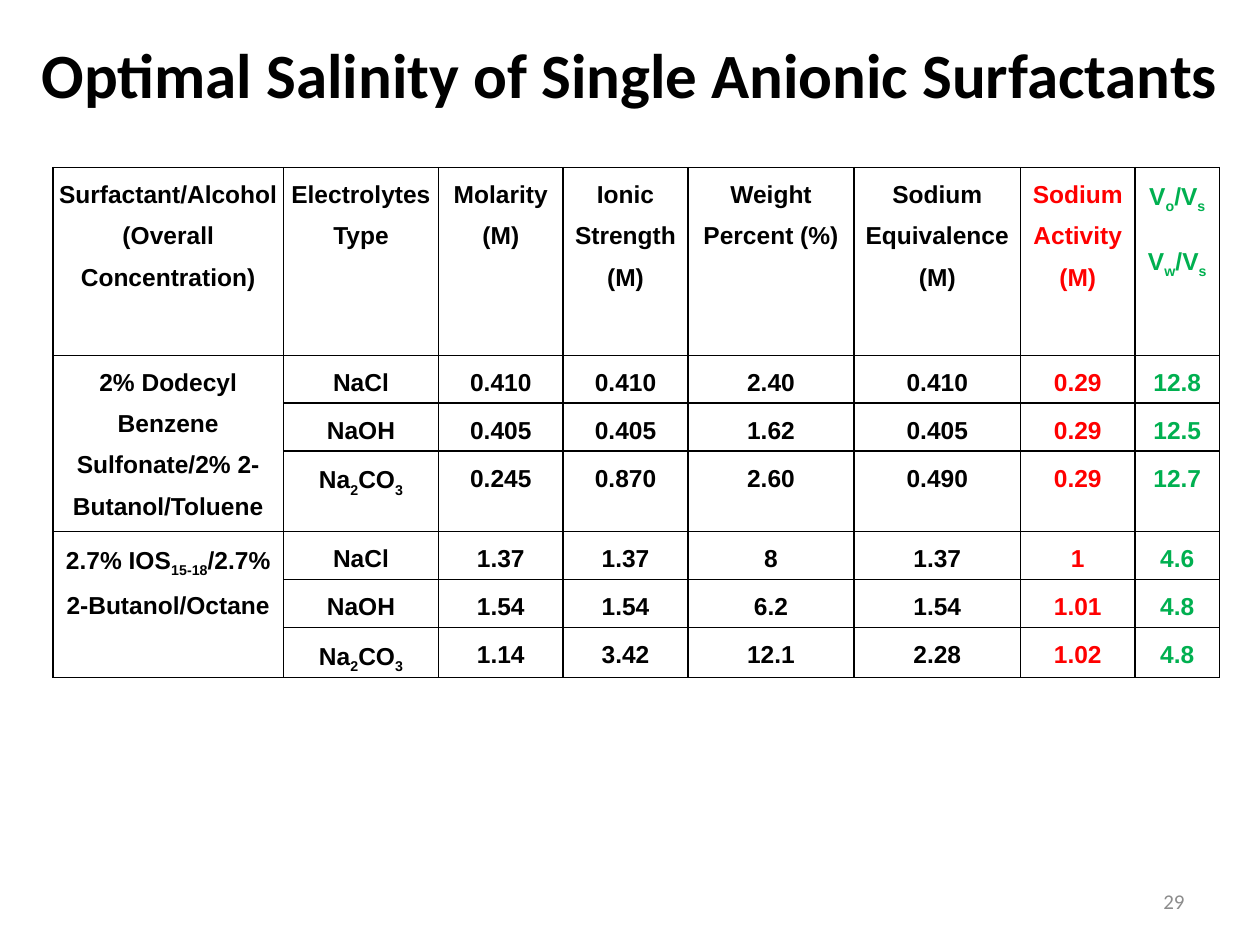
from lxml.etree import SubElement
from pptx import Presentation
from pptx.dml.color import RGBColor
from pptx.enum.text import MSO_ANCHOR, PP_ALIGN
from pptx.oxml.ns import qn
from pptx.util import Inches, Pt

BLACK, RED, GREEN, GRAY = "000000", "FF0000", "00B050", "8C8C8C"

COLUMN_WIDTHS = [1.83, 1.23, 0.99, 0.99, 1.32, 1.32, 0.91, 0.67]
COLUMN_COLORS = [BLACK] * 6 + [RED, GREEN]
ROW_HEIGHTS = [1.49] + [0.38] * 6

# Text between tildes is subscript; a line break starts a new paragraph
HEADERS = [
    "Surfactant/Alcohol (Overall Concentration)", "Electrolytes Type",
    "Molarity (M)", "Ionic Strength (M)", "Weight Percent (%)",
    "Sodium Equivalence (M)", "Sodium Activity (M)",
    "V~o~/V~s~\nV~w~/V~s~",
]
SURFACTANTS = {
    "2% Dodecyl Benzene Sulfonate/2% 2-Butanol/Toluene": [
        ["NaCl", "0.410", "0.410", "2.40", "0.410", "0.29", "12.8"],
        ["NaOH", "0.405", "0.405", "1.62", "0.405", "0.29", "12.5"],
        ["Na~2~CO~3~", "0.245", "0.870", "2.60", "0.490", "0.29", "12.7"],
    ],
    "2.7% IOS~15-18~/2.7% 2-Butanol/Octane": [
        ["NaCl", "1.37", "1.37", "8", "1.37", "1", "4.6"],
        ["NaOH", "1.54", "1.54", "6.2", "1.54", "1.01", "4.8"],
        ["Na~2~CO~3~", "1.14", "3.42", "12.1", "2.28", "1.02", "4.8"],
    ],
}


def rgb(color):
    return RGBColor.from_string(color)


def style_font(font, name, size, color, bold=False):
    font.name = name
    font.size = Pt(size)
    font.bold = bold
    font.color.rgb = rgb(color)


def add_label(slide, box, text, size, color, alignment, bold=False):
    shape = slide.shapes.add_textbox(*map(Inches, box))
    text_frame = shape.text_frame
    text_frame.word_wrap = True
    text_frame.vertical_anchor = MSO_ANCHOR.MIDDLE
    text_frame.text = text
    paragraph = text_frame.paragraphs[0]
    paragraph.alignment = alignment
    style_font(paragraph.runs[0].font, "Calibri", size, color, bold)


def set_borders(cell, color, width):
    properties = cell._tc.get_or_add_tcPr()
    for side in ("lnL", "lnR", "lnT", "lnB"):
        line = SubElement(properties, qn(f"a:{side}"), w=str(Pt(width)))
        fill = SubElement(line, qn("a:solidFill"))
        SubElement(fill, qn("a:srgbClr"), val=color)


def write_cell(cell, text, color):
    cell.margin_left = cell.margin_right = Inches(0.04)
    cell.margin_top = cell.margin_bottom = 0
    text_frame = cell.text_frame
    text_frame.text = text.replace("~", "")
    for paragraph, line in zip(text_frame.paragraphs, text.split("\n")):
        paragraph.alignment = PP_ALIGN.CENTER
        paragraph.line_spacing = 1.5
        paragraph.space_after = Pt(10)
        paragraph.clear()
        for index, part in enumerate(line.split("~")):
            if not part:
                continue
            run = paragraph.add_run()
            run.text = part
            style_font(run.font, "Arial", 14, color, bold=True)
            if index % 2:
                run._r.get_or_add_rPr().set("baseline", "-25000")


def add_salinity_table(slide, left, top):
    table = slide.shapes.add_table(
        len(ROW_HEIGHTS), len(COLUMN_WIDTHS), Inches(left), Inches(top),
        Inches(sum(COLUMN_WIDTHS)), Inches(sum(ROW_HEIGHTS))).table
    table.first_row = table.horz_banding = False
    for column, width in zip(table.columns, COLUMN_WIDTHS):
        column.width = Inches(width)
    for row, height in zip(table.rows, ROW_HEIGHTS):
        row.height = Inches(height)
    for cell in table.iter_cells():
        set_borders(cell, BLACK, 1)
        cell.fill.background()

    # Header row
    for column, (text, color) in enumerate(zip(HEADERS, COLUMN_COLORS)):
        write_cell(table.cell(0, column), text, color)

    # One merged name cell per surfactant, one row per electrolyte
    first_row = 1
    for surfactant, records in SURFACTANTS.items():
        last_row = first_row + len(records) - 1
        table.cell(first_row, 0).merge(table.cell(last_row, 0))
        write_cell(table.cell(first_row, 0), surfactant, BLACK)
        for row, record in enumerate(records, first_row):
            for column, text in enumerate(record, 1):
                write_cell(table.cell(row, column), text, COLUMN_COLORS[column])
        first_row = last_row + 1


def main():
    presentation = Presentation()
    presentation.slide_width = Inches(10)
    presentation.slide_height = Inches(7.5)
    slide = presentation.slides.add_slide(presentation.slide_layouts[6])

    # Title
    add_label(slide, (0, 0, 10, 1.17),
              "Optimal Salinity of Single Anionic Surfactants",
              36, BLACK, PP_ALIGN.CENTER, bold=True)
    # Salinity data
    add_salinity_table(slide, 0.42, 1.33)
    # Slide number
    add_label(slide, (7.17, 6.95, 2.33, 0.4), "29", 12, GRAY, PP_ALIGN.RIGHT)

    presentation.save("out.pptx")


if __name__ == "__main__":
    main()
